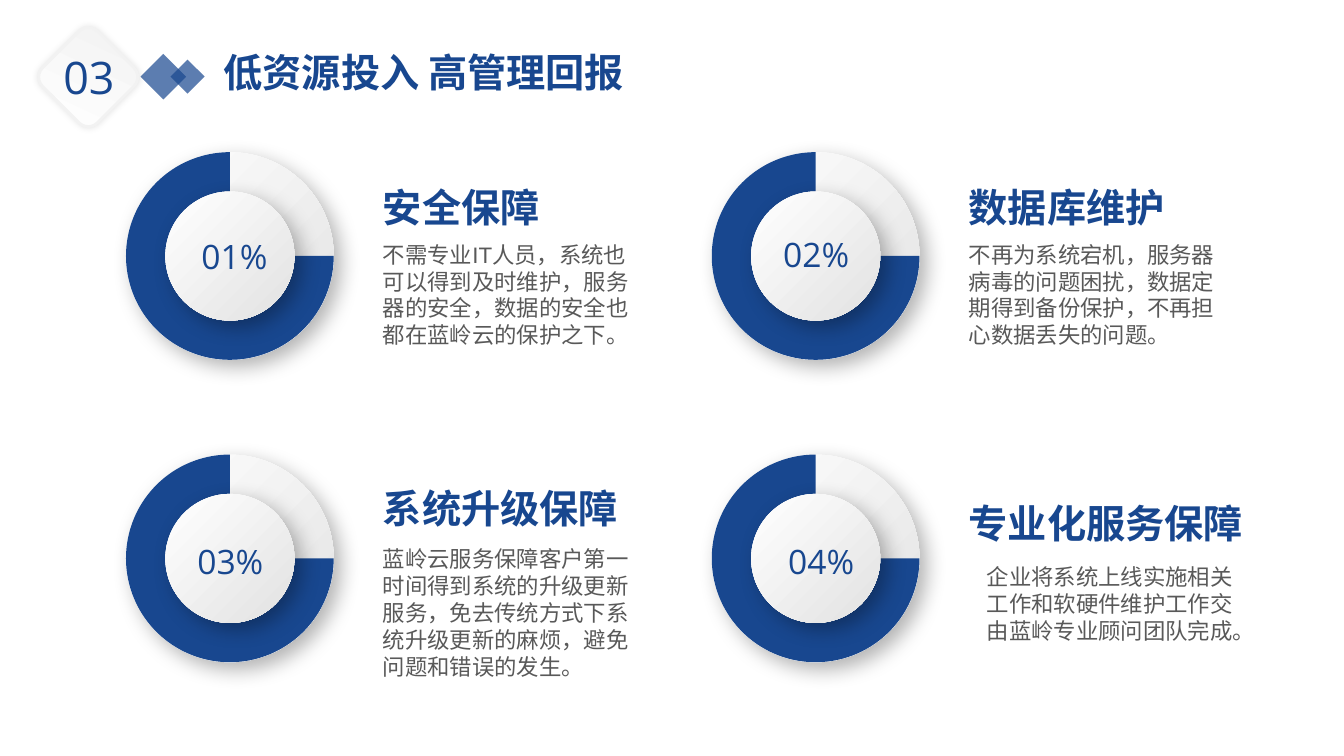
from pptx import Presentation
from pptx.dml.color import RGBColor
from pptx.enum.shapes import MSO_SHAPE
from pptx.enum.text import MSO_AUTO_SIZE, PP_ALIGN
from pptx.oxml import parse_xml
from pptx.oxml.ns import nsdecls, qn
from pptx.util import Inches, Pt

BLUE = "18478F"
GREY = "595959"
WHITE = "FFFFFF"
RING_SIZE = 2.06
HUB_SIZE = 1.28
COLUMNS = (1.25, 7.06)
ROWS = (1.51, 4.51)

BENEFITS = [
    {
        "percent": ("01%", 1.57, 2.29),
        "heading": ("安全保障", 3.7, 1.77, 1.86),
        "detail": ("不需专业IT人员，系统也可以得到及时维护，服务器的安全，"
                   "数据的安全也都在蓝岭云的保护之下。", 3.7, 2.34, 2.72, 1.18),
    },
    {
        "percent": ("02%", 7.34, 2.27),
        "heading": ("数据库维护", 9.51, 1.77, 2.41),
        "detail": ("不再为系统宕机，服务器病毒的问题困扰，数据定期得到备份保护，"
                   "不再担心数据丢失的问题。", 9.51, 2.34, 2.72, 1.18),
    },
    {
        "percent": ("03%", 1.53, 5.32),
        "heading": ("系统升级保障", 3.7, 4.76, 2.72),
        "detail": ("蓝岭云服务保障客户第一时间得到系统的升级更新服务，"
                   "免去传统方式下系统升级更新的麻烦，避免问题和错误的发生。",
                   3.7, 5.36, 2.72, 1.45),
    },
    {
        "percent": ("04%", 7.39, 5.32),
        "heading": ("专业化服务保障", 9.51, 4.9, 3.24),
        "detail": ("企业将系统上线实施相关工作和软硬件维护工作交由蓝岭专业顾问团队完成。",
                   9.69, 5.54, 2.78, 0.91),
    },
]


def colour(hex_code):
    """Turn a hex string into a colour."""
    return RGBColor.from_string(hex_code)


def add_figure(slide, preset, left, top, size, rotation=0):
    """Add a square-framed shape without outline or shadow."""
    figure = slide.shapes.add_shape(
        preset, Inches(left), Inches(top), Inches(size), Inches(size))
    figure.rotation = rotation
    figure.shadow.inherit = False
    figure.line.fill.background()
    return figure


def fill_solid(figure, hex_code, opacity=100):
    """Fill a shape with one colour at an opacity in percent."""
    figure.fill.solid()
    figure.fill.fore_color.rgb = colour(hex_code)
    if opacity < 100:
        tint = figure._element.spPr.find(qn("a:solidFill"))[0]
        tint.append(parse_xml(f'<a:alpha {nsdecls("a")} val="{opacity * 1000}"/>'))


def fill_gradient(figure, end_colour, clockwise_angle):
    """Fill a shape with a gradient from white to a light grey."""
    figure.fill.gradient()
    figure.fill.gradient_angle = 360 - clockwise_angle
    for stop, hex_code, position in zip(
            figure.fill.gradient_stops, (WHITE, end_colour), (0, 1)):
        stop.color.rgb = colour(hex_code)
        stop.position = position


def cast_shadow(figure, opacity, blur, distance, direction):
    """Give a shape a soft black outer shadow."""
    effects = figure._element.spPr.find(qn("a:effectLst"))
    effects.append(parse_xml(
        f'<a:outerShdw {nsdecls("a")} blurRad="{Pt(blur)}" dist="{Pt(distance)}" '
        f'dir="{direction * 60000}" algn="ctr" rotWithShape="0">'
        f'<a:srgbClr val="000000"><a:alpha val="{opacity * 1000}"/></a:srgbClr>'
        '</a:outerShdw>'))


def add_label(slide, wording, left, top, width, height, size,
              font="Arial", hex_code=BLUE, bold=False, align=None, wrap=True):
    """Add a text box holding one run."""
    label = slide.shapes.add_textbox(
        Inches(left), Inches(top), Inches(width), Inches(height))
    frame = label.text_frame
    frame.word_wrap = wrap
    frame.auto_size = MSO_AUTO_SIZE.SHAPE_TO_FIT_TEXT
    paragraph = frame.paragraphs[0]
    paragraph.alignment = align
    run = paragraph.add_run()
    run.text = wording
    run.font.name = font
    run.font.size = Pt(size)
    run.font.bold = bold
    run.font.color.rgb = colour(hex_code)


def add_disc(slide, left, top, size):
    """Add a raised pale disc."""
    disc = add_figure(slide, MSO_SHAPE.OVAL, left, top, size)
    fill_gradient(disc, "E2E2E2", 45)
    cast_shadow(disc, 30, 15, 7, 45)


def add_dial(slide, left, top):
    """Add a three-quarter blue ring around a raised hub."""
    inset = (RING_SIZE - HUB_SIZE) / 2
    add_disc(slide, left, top, RING_SIZE)
    fill_solid(add_figure(slide, MSO_SHAPE.PIE, left, top, RING_SIZE), BLUE)
    add_disc(slide, left + inset, top + inset, HUB_SIZE)


def add_benefit(slide, percent, heading, detail):
    """Add the percentage, heading and description of one benefit."""
    add_label(slide, *percent, 1.51, 0.5, 24, font="Open Sans",
              align=PP_ALIGN.CENTER)
    add_label(slide, *detail, 16, hex_code=GREY)
    add_label(slide, *heading, 0.57, 28, bold=True)


def add_header(slide):
    """Add the section number, diamonds and slide title."""
    for left, top, size in ((1.46, 0.6, 0.32), (1.74, 0.64, 0.24)):
        diamond = add_figure(slide, MSO_SHAPE.RECTANGLE, left, top, size, 225)
        fill_solid(diamond, BLUE, 70)
    add_label(slide, "低资源投入 高管理回报", 2.12, 0.43, 4.3, 0.57, 28,
              font="Open Sans", bold=True)
    badge = add_figure(slide, MSO_SHAPE.ROUNDED_RECTANGLE, 0.49, 0.38, 0.77, 45)
    fill_gradient(badge, "F2F2F2", 250)
    badge.line.color.rgb = colour("F2F2F2")
    badge.line.width = Pt(2)
    cast_shadow(badge, 11, 5, 0, 0)
    add_label(slide, "03", 0.53, 0.44, 0.71, 0.64, 32, font="Open Sans",
              wrap=False)


def main():
    """Build and save the slide."""
    deck = Presentation()
    deck.slide_width = Inches(13.33)
    deck.slide_height = Inches(7.5)
    slide = deck.slides.add_slide(deck.slide_layouts[6])
    for top in ROWS:
        for left in COLUMNS:
            add_dial(slide, left, top)
    for benefit in BENEFITS:
        add_benefit(slide, **benefit)
    add_header(slide)
    deck.save("out.pptx")


if __name__ == "__main__":
    main()
